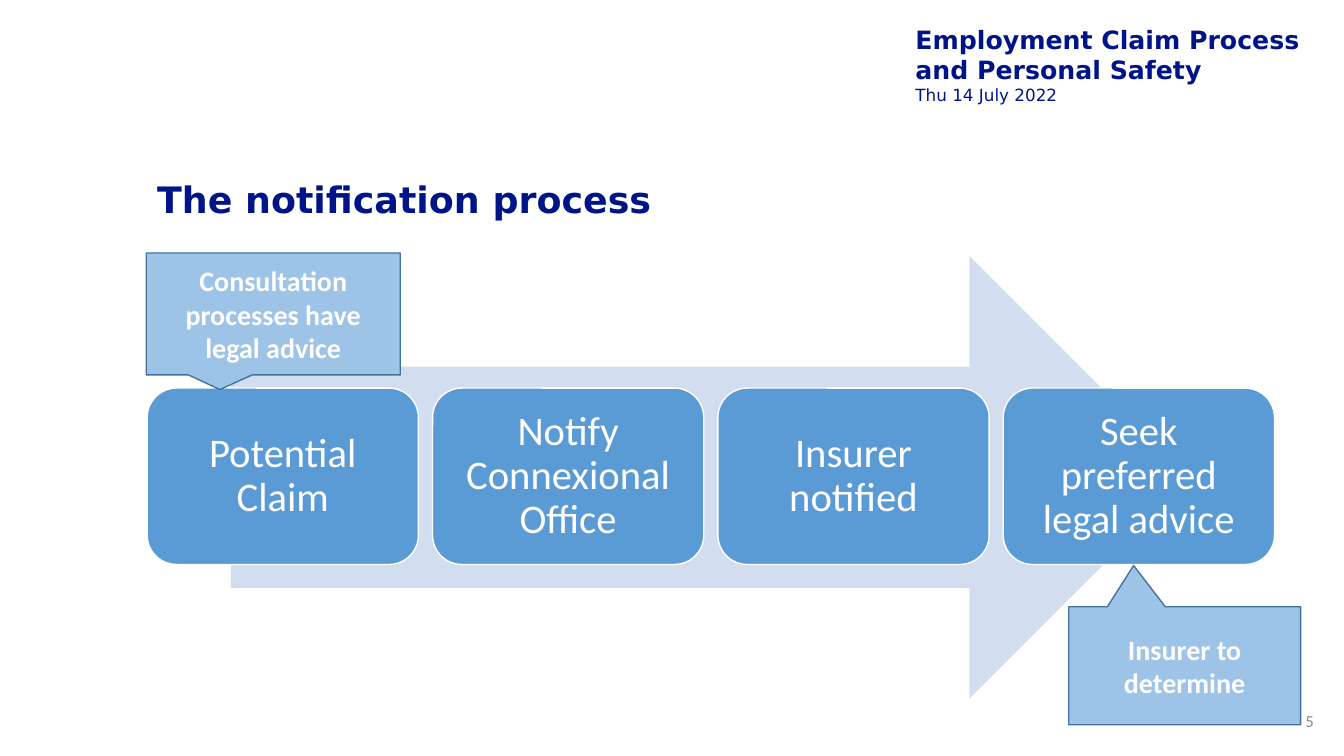
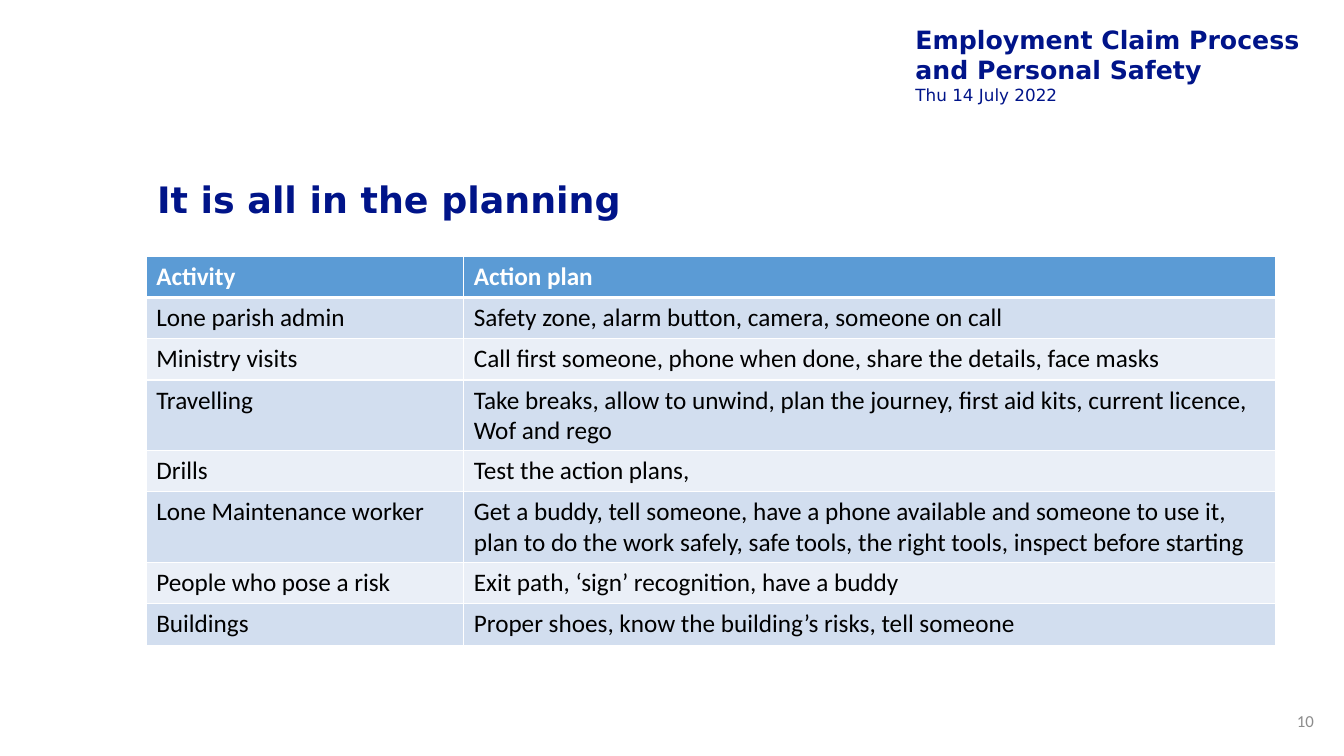
from lxml.etree import SubElement
from pptx import Presentation
from pptx.dml.color import RGBColor
from pptx.enum.shapes import MSO_SHAPE as Kind
from pptx.enum.text import MSO_ANCHOR as Anchor, PP_ALIGN as Align
from pptx.oxml import parse_xml
from pptx.oxml.ns import nsdecls, qn
from pptx.util import Inches, Pt

NAVY, BLUE, PALE, LIGHT = "001489", "5B9BD5", "D2DEEF", "EAEFF7"
SKY, EDGE, WHITE, BLACK, GREY = "9DC3E6", "43739E", "FFFFFF", "000000", "8C8C8C"
SANS, BODY = "DejaVu Sans", "Calibri"


def write(frame, lines, color, font=BODY, align=Align.LEFT, space=1.0, anchor=Anchor.MIDDLE):
    """Fill a text frame with one paragraph for each (text, size, bold)."""
    frame.word_wrap = True
    frame.vertical_anchor = anchor
    for i, (text, size, bold) in enumerate(lines):
        para = frame.add_paragraph() if i else frame.paragraphs[0]
        para.alignment = align
        para.line_spacing = space
        run = para.add_run()
        run.text = text
        run.font.name = font
        run.font.size = Pt(size)
        run.font.bold = bold
        run.font.color.rgb = RGBColor.from_string(color)


def draw(slide, kind, box, fill, edge=None):
    shape = slide.shapes.add_shape(kind, *map(Inches, box))
    shape.shadow.inherit = False
    shape.fill.solid()
    shape.fill.fore_color.rgb = RGBColor.from_string(fill)
    if edge:
        shape.line.color.rgb = RGBColor.from_string(edge)
        shape.line.width = Pt(1)
    else:
        shape.line.fill.background()
    return shape


deck = Presentation()
deck.slide_width, deck.slide_height = Inches(13.33), Inches(7.5)

# Header, title and page number
head = [("Employment Claim Process", 18, True),
        ("and Personal Safety", 18, True),
        ("Thu 14 July 2022", 12, False)]
pages = []
for title, num in [("The notification process", "5"), ("It is all in the planning", "10")]:
    slide = deck.slides.add_slide(deck.slide_layouts[6])
    pages.append(slide)
    for box, lines, color, font, align, space, anchor in [
        ((9.01, 0.2, 4.07, 1.19), head, NAVY, SANS, Align.LEFT, 1.0, Anchor.TOP),
        ((1.46, 1.5, 11.2, 1.01), [(title, 26, True)], NAVY, SANS, Align.LEFT, 0.9, Anchor.MIDDLE),
        ((12.71, 6.95, 0.42, 0.4), [(num, 12, False)], GREY, BODY, Align.RIGHT, 1.0, Anchor.MIDDLE),
    ]:
        frame = slide.shapes.add_textbox(*map(Inches, box)).text_frame
        if lines is head:
            frame.margin_left = frame.margin_right = Inches(0.07)
            frame.margin_top = frame.margin_bottom = Inches(0.04)
        write(frame, lines, color, font, align, space, anchor)
flow, plan = pages

# Process arrow with its steps
draw(flow, Kind.RIGHT_ARROW, (2.29, 2.54, 9.52, 4.39), PALE)
steps = ["Potential Claim", "Notify Connexional Office", "Insurer notified",
         "Seek preferred legal advice"]
wide, gap = 2.69, 0.14
for i, text in enumerate(steps):
    step = draw(flow, Kind.ROUNDED_RECTANGLE, (1.46 + i * (wide + gap), 3.85, wide, 1.75), BLUE, WHITE)
    frame = step.text_frame
    frame.margin_left = frame.margin_right = Inches(0.12)
    frame.margin_top = frame.margin_bottom = Inches(0.12)
    write(frame, [(text, 29, False)], WHITE, align=Align.CENTER, space=0.9)

# Callouts
for text, box, tip in [
    ("Consultation processes have legal advice", (1.45, 2.51, 2.52, 1.21), (-0.21, 0.62)),
    ("Insurer to determine", (10.6, 6.02, 2.3, 1.17), (-0.22, -0.85)),
]:
    note = draw(flow, Kind.RECTANGULAR_CALLOUT, box, SKY, EDGE)
    note.adjustments[0], note.adjustments[1] = tip
    write(note.text_frame, [(text, 20, True)], WHITE, align=Align.CENTER)

# Planning table
rows = [
    ("Activity", "Action plan"),
    ("Lone parish admin", "Safety zone, alarm button, camera, someone on call"),
    ("Ministry visits", "Call first someone, phone when done, share the details, face masks"),
    ("Travelling", "Take breaks, allow to unwind, plan the journey, first aid kits, "
                   "current licence, Wof and rego"),
    ("Drills", "Test the action plans,"),
    ("Lone Maintenance worker", "Get a buddy, tell someone, have a phone available and someone "
                                "to use it, plan to do the work safely, safe tools, the right "
                                "tools, inspect before starting"),
    ("People who pose a risk", "Exit path, ‘sign’ recognition, have a buddy"),
    ("Buildings", "Proper shoes, know the building’s risks, tell someone"),
]
high = 0.41
table = plan.shapes.add_table(len(rows), 2, Inches(1.45), Inches(2.54), Inches(11.2),
                              Inches(high * len(rows))).table
for col, width in zip(table.columns, (3.15, 8.05)):
    col.width = Inches(width)
for r, texts in enumerate(rows):
    table.rows[r].height = Inches(high)
    top = r == 0
    fill = BLUE if top else PALE if r % 2 else LIGHT
    thick = {"lnB": 3} if top else {"lnT": 3} if r == 1 else {}
    for c, text in enumerate(texts):
        cell = table.cell(r, c)
        write(cell.text_frame, [(text, 18, top)], WHITE if top else BLACK)
        cell.vertical_anchor = Anchor.TOP
        cell.fill.solid()
        cell.fill.fore_color.rgb = RGBColor.from_string(fill)
        props = cell._tc.get_or_add_tcPr()
        for i, side in enumerate(("lnL", "lnR", "lnT", "lnB")):
            line = parse_xml(f'<a:{side} {nsdecls("a")} w="{Pt(thick.get(side, 1))}"/>')
            solid = SubElement(line, qn("a:solidFill"))
            SubElement(solid, qn("a:srgbClr"), val=WHITE)
            props.insert(i, line)

deck.save("out.pptx")
